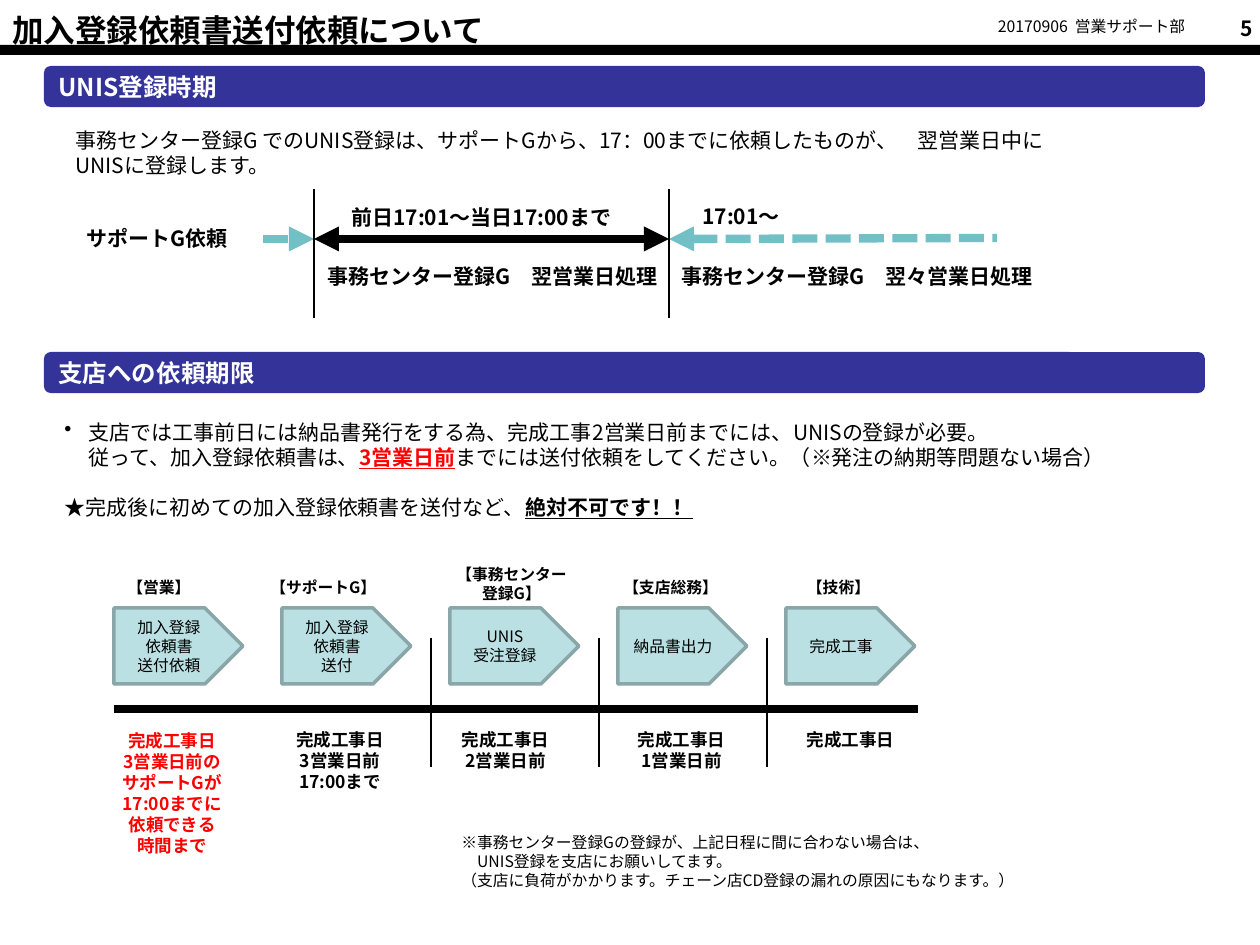
from lxml import etree
from pptx import Presentation, util as u
from pptx.dml.color import RGBColor
from pptx.enum import dml, shapes, text
from pptx.oxml.ns import qn

PX = 914400 / 126  # EMU in one px
FONT = "Noto Sans CJK JP"
BLACK = RGBColor(0, 0, 0)
WHITE = RGBColor(255, 255, 255)
RED = RGBColor(255, 0, 0)
NAVY = RGBColor(0x33, 0x33, 0x99)
TEAL = RGBColor(0x72, 0xBF, 0xC5)
PALE_TEAL = RGBColor(0xBB, 0xE0, 0xE3)
GREY_TEAL = RGBColor(0x8A, 0xA6, 0xA8)
LEFT, CENTER, RIGHT = text.PP_ALIGN.LEFT, text.PP_ALIGN.CENTER, text.PP_ALIGN.RIGHT
BOLD = {"bold": True}

# A paragraph is a string or a list of (words, format) runs; \v breaks a line.
HEADER = [
    ((0, 5, 730, 50), ["加入登録依頼書送付依頼について"], 18, LEFT, BOLD),
    ((978, 11, 227, 32), ["20170906  営業サポート部"], 9, CENTER, {}),
    ((1197, 9, 68, 36), ["5"], 12, RIGHT, BOLD),
]
SECTIONS = [(66, "UNIS登録時期"), (352, "支店への依頼期限")]

TIMING_NOTE = [
    "　事務センター登録G でのUNIS登録は、サポートGから、17：00までに依頼したものが、　翌営業日中に",
    "　UNISに登録します。",
]
TIMING_LABELS = [
    ((339, 198, 340, 38), "前日17:01～当日17:00まで"),
    ((690, 197, 112, 38), "17:01～"),
    ((74, 219, 169, 38), "サポートG依頼"),
    ((315, 257, 360, 38), "事務センター登録G　翌営業日処理"),
    ((669, 257, 381, 38), "事務センター登録G　翌々営業日処理"),
]
CUTOFFS = (314, 669)

DEADLINE_NOTE = [
    [("支店では工事前日には納品書発行をする為、完成工事2営業日前までには、UNISの登録が必要。"
      "\v従って、加入登録依頼書は、", {}),
     ("3営業日前", {"bold": True, "underline": True, "color": RED}),
     ("までには送付依頼をしてください。（※発注の納期等問題ない場合）", {})],
    [("★完成後に初めての加入登録依頼書を送付など、", {}),
     ("絶対不可です！！", {"bold": True, "underline": True})],
]

# owner, owner box, step, deadline, deadline box, deadline colour
FLOW = [
    ("【営業】", (115, 572, 110, 32), ["加入登録", "依頼書\v送付依頼"],
     ["完成工事日", "3営業日前の", "サポートGが", "17:00までに", "依頼できる", "時間まで"],
     (105, 724, 134, 140), RED),
    ("【サポートG】", (258, 572, 159, 32), ["加入登録", "依頼書", "送付"],
     ["完成工事日", "3営業日前", "17:00まで"], (282, 723, 116, 77), BLACK),
    ("【事務センター\v登録G】", (432, 559, 159, 50), ["UNIS\v受注登録"],
     ["完成工事日", "2営業日前"], (449, 723, 113, 55), BLACK),
    ("【支店総務】", (591, 572, 159, 32), ["納品書出力"],
     ["完成工事日", "1営業日前"], (625, 723, 113, 55), BLACK),
    ("【技術】", (759, 572, 159, 32), ["完成工事"],
     ["完成工事日"], (794, 723, 113, 34), BLACK),
]
FLOW_LEFT, FLOW_STEP = 114, 168

FOOTNOTE = [
    "※事務センター登録Gの登録が、上記日程に間に合わない場合は、",
    "　UNIS登録を支店にお願いしてます。\v（支店に負荷がかかります。チェーン店CD登録の漏れの原因にもなります。）",
]


def emu(*lengths):
    return [round(length * PX) for length in lengths]


def write(frame, paragraphs, size, align=LEFT, **base):
    frame.word_wrap = True
    for i, runs in enumerate(paragraphs):
        para = frame.paragraphs[0] if i == 0 else frame.add_paragraph()
        para.alignment = align
        for words, extra in [(runs, {})] if isinstance(runs, str) else runs:
            look = {"name": FONT, "size": u.Pt(size), "color": BLACK, **base, **extra}
            color = look.pop("color")
            for n, line in enumerate(words.split("\v")):
                if n:
                    para.add_line_break()
                run = para.add_run()
                run.text = line
                run.font.color.rgb = color
                for key, value in look.items():
                    setattr(run.font, key, value)
                east_asian = etree.Element(qn("a:ea"), typeface=FONT)
                run.font._element.find(qn("a:latin")).addnext(east_asian)


def add_text(box, paragraphs, size, align=LEFT, **base):
    frame = slide.shapes.add_textbox(*emu(*box)).text_frame
    write(frame, paragraphs, size, align, **base)
    frame.auto_size = text.MSO_AUTO_SIZE.SHAPE_TO_FIT_TEXT
    return frame


def add_block(kind, box, fill, outline=None):
    block = slide.shapes.add_shape(kind, *emu(*box))
    block.shadow.inherit = False
    block.fill.solid()
    block.fill.fore_color.rgb = fill
    if outline:
        block.line.color.rgb = outline
        block.line.width = u.Pt(2)
    else:
        block.line.fill.background()
    block.text_frame.vertical_anchor = text.MSO_ANCHOR.MIDDLE
    return block.text_frame


def add_line(start, end, color=BLACK, width=0.75, dashed=False, arrows=()):
    """Draw a straight line; arrows names its ends, headEnd before tailEnd."""
    line = slide.shapes.add_connector(shapes.MSO_CONNECTOR.STRAIGHT, *emu(*start, *end))
    line.line.color.rgb = color
    line.line.width = u.Pt(width)
    if dashed:
        line.line.dash_style = dml.MSO_LINE.SQUARE_DOT
    properties = line._element.spPr
    stroke = properties.find(qn("a:ln"))
    if dashed:
        stroke.find(qn("a:prstDash")).set("val", "sysDash")
    for arrow in arrows:
        etree.SubElement(stroke, qn("a:" + arrow), type="triangle")
    etree.SubElement(properties, qn("a:effectLst"))


prs = Presentation()
prs.slide_width, prs.slide_height = emu(1260, 945)
slide = prs.slides.add_slide(prs.slide_layouts[6])

add_block(shapes.MSO_SHAPE.RECTANGLE, (0, 45, 1260, 10), BLACK)
for box, words, size, align, look in HEADER:
    add_text(box, words, size, align, **look)
for top, heading in SECTIONS:
    bar = add_block(shapes.MSO_SHAPE.ROUNDED_RECTANGLE, (44, top, 1161, 41), NAVY)
    write(bar, [heading], 14, color=WHITE, bold=True)

add_text((42, 121, 1124, 63), TIMING_NOTE, 12)
first, second = CUTOFFS
add_line((first, 239), (second, 239), width=4.75, arrows=("headEnd", "tailEnd"))
add_line((second, 239), (997, 238), TEAL, 4.75, True, ("headEnd",))
add_line((263, 239), (first, 239), TEAL, 4.75, True, ("tailEnd",))
for x in CUTOFFS:
    add_line((x, 189), (x, 318))
for box, label in TIMING_LABELS:
    add_text(box, [label], 12, bold=True)

note = add_text((52, 413, 1124, 115), DEADLINE_NOTE, 12)
bulleted, warning = note.paragraphs
indent = bulleted._p.get_or_add_pPr()
indent.set("marL", str(emu(24)[0]))
indent.set("indent", str(emu(-24)[0]))
etree.SubElement(indent, qn("a:buChar"), char="•")
warning.space_before = u.Pt(14)

for i, (owner, owner_box, step, deadline, deadline_box, color) in enumerate(FLOW):
    left = FLOW_LEFT + i * FLOW_STEP
    plate = add_block(shapes.MSO_SHAPE.PENTAGON, (left, 608, 129, 76), PALE_TEAL, GREY_TEAL)
    write(plate, step, 9, CENTER)
    add_text(owner_box, [owner], 9, LEFT if i < 2 else CENTER, bold=True)
    add_text(deadline_box, deadline, 10, CENTER, bold=True, color=color)
    if i >= 2:
        add_line((left - 19, 638), (left - 19, 767))
add_line((FLOW_LEFT, 709), (918, 709), width=4.75)

add_text((449, 827, 748, 70), FOOTNOTE, 9)

prs.save("out.pptx")
